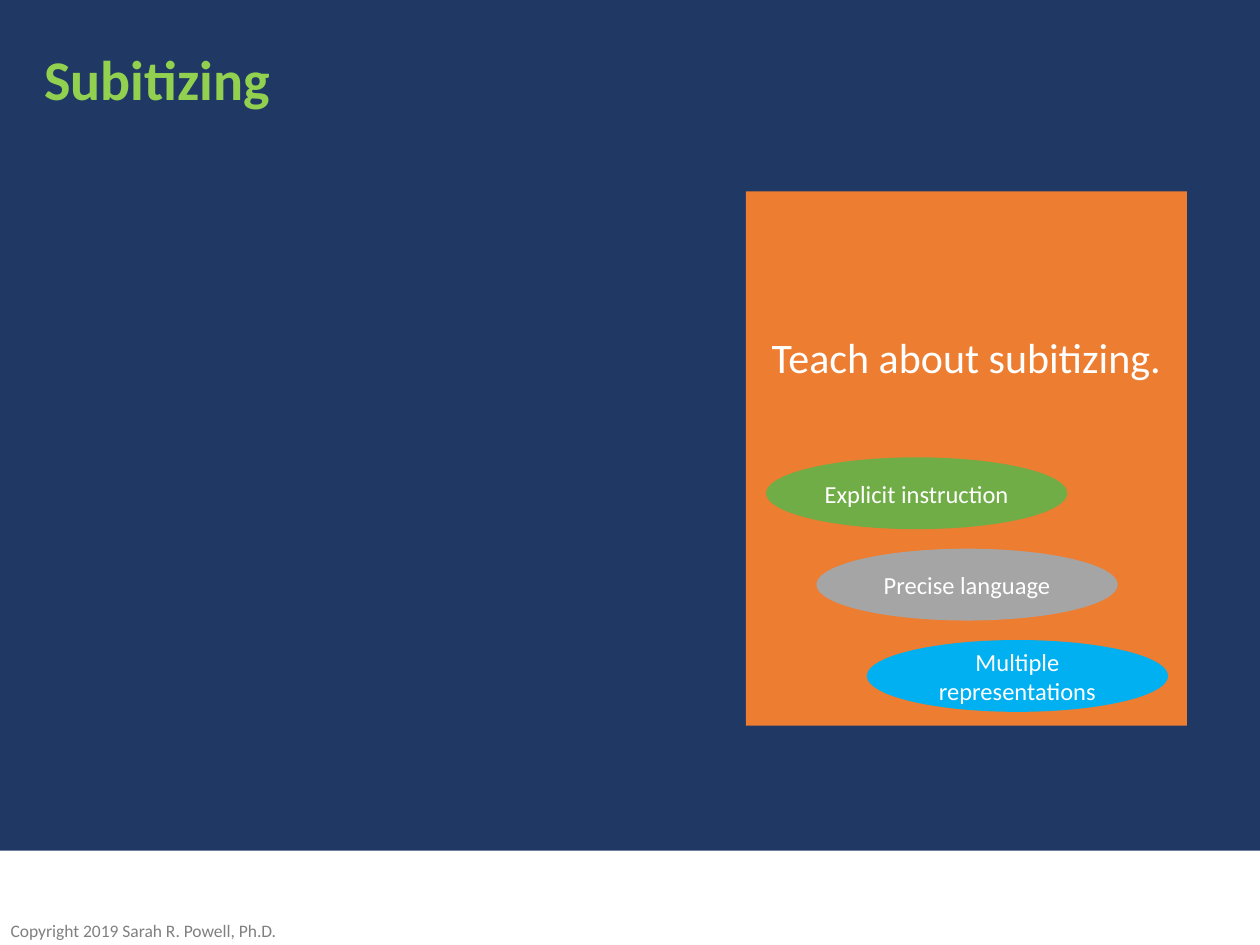
from dataclasses import dataclass

from pptx import Presentation
from pptx.dml.color import RGBColor
from pptx.enum.shapes import MSO_SHAPE
from pptx.enum.text import MSO_ANCHOR, MSO_AUTO_SIZE, PP_ALIGN
from pptx.util import Inches, Pt


@dataclass(frozen=True)
class Theme:
    font: str = "Calibri"
    navy: str = "203864"
    white: str = "FFFFFF"
    lime: str = "92D050"
    orange: str = "ED7D31"
    green: str = "70AD47"
    silver: str = "A5A5A5"
    sky: str = "00B0F0"
    grey: str = "808080"
    title_size: int = 32
    card_size: int = 24
    label_size: int = 14
    footer_size: int = 10


THEME = Theme()


def paint(fill, color):
    fill.solid()
    fill.fore_color.rgb = RGBColor.from_string(color)


def write(shape, text, size, color, align, bold=False):
    frame = shape.text_frame
    frame.word_wrap = True
    frame.auto_size = MSO_AUTO_SIZE.NONE
    frame.vertical_anchor = MSO_ANCHOR.MIDDLE
    paragraph = frame.paragraphs[0]
    paragraph.text = text
    paragraph.alignment = align
    font = paragraph.font
    font.name, font.size, font.bold = THEME.font, Pt(size), bold
    font.color.rgb = RGBColor.from_string(color)
    return paragraph


def add_filled(shapes, preset, box, color):
    shape = shapes.add_shape(preset, *map(Inches, box))
    shape.shadow.inherit = False
    paint(shape.fill, color)
    shape.line.fill.background()
    return shape


def add_footer(slide, box):
    left, top, width, height = box
    add_filled(slide.shapes, MSO_SHAPE.RECTANGLE, box, THEME.white)
    copyright_box = slide.shapes.add_textbox(
        Inches(left), Inches(top + height - 0.2), Inches(2.29), Inches(0.17))
    frame = copyright_box.text_frame
    frame.margin_left = frame.margin_top = frame.margin_bottom = 0
    write(copyright_box, "Copyright 2019 Sarah R. Powell, Ph.D.",
          THEME.footer_size, THEME.grey, PP_ALIGN.RIGHT)


def format_title(slide, text, box):
    title = slide.shapes.title
    title.left, title.top, title.width, title.height = map(Inches, box)
    paint(title.fill, THEME.navy)
    paragraph = write(title, text, THEME.title_size, THEME.lime,
                      PP_ALIGN.LEFT, bold=True)
    paragraph.line_spacing = 1.1
    title.text_frame.vertical_anchor = MSO_ANCHOR.TOP


def add_teaching_card(slide, box, message, strategies):
    """Place a card whose strategy ovals step down to the right."""
    left, top, _, _ = box
    group = slide.shapes.add_group_shape().shapes
    card = add_filled(group, MSO_SHAPE.RECTANGLE, box, THEME.orange)
    write(card, message, THEME.card_size, THEME.white, PP_ALIGN.CENTER)
    card.text_frame.margin_bottom = Inches(1.66)  # room for the ovals

    for step, (label, color) in enumerate(strategies):
        oval_box = (left + 0.16 + 0.4 * step, top + 2.11 + 0.725 * step,
                    2.39, 0.57)
        oval = add_filled(group, MSO_SHAPE.OVAL, oval_box, color)
        write(oval, label, THEME.label_size, THEME.white, PP_ALIGN.CENTER)


def main():
    deck = Presentation()
    deck.slide_width, deck.slide_height = Inches(10), Inches(7.5)
    slide = deck.slides.add_slide(deck.slide_layouts.get_by_name("Title Only"))
    paint(slide.background.fill, THEME.navy)

    add_footer(slide, (0, 6.75, 10, 0.75))
    format_title(slide, "Subitizing", (0.25, 0.25, 9.5, 0.8))
    add_teaching_card(
        slide, (5.92, 1.52, 3.5, 4.24), "Teach about subitizing.",
        [("Explicit instruction", THEME.green),
         ("Precise language", THEME.silver),
         ("Multiple representations", THEME.sky)])
    deck.save("out.pptx")


if __name__ == "__main__":
    main()
